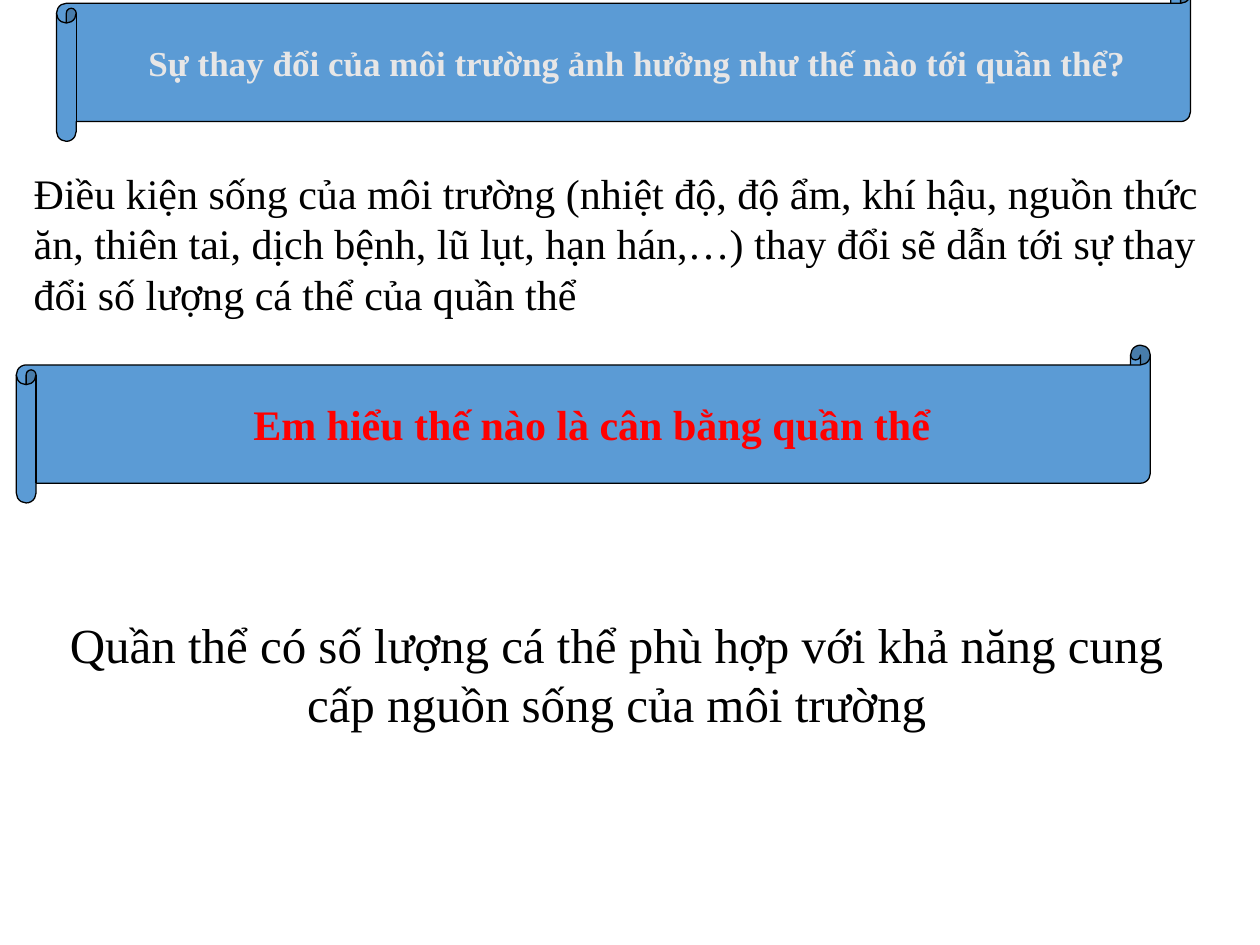
from dataclasses import dataclass

from pptx import Presentation
from pptx.dml.color import RGBColor
from pptx.enum.shapes import MSO_SHAPE as Shape
from pptx.enum.text import MSO_ANCHOR as Anchor, MSO_AUTO_SIZE as AutoSize, PP_ALIGN as Align
from pptx.util import Cm, Pt


@dataclass(frozen=True)
class Theme:
    font: str = "Times New Roman"
    banner: RGBColor = RGBColor(0x5B, 0x9B, 0xD5)
    ink: RGBColor = RGBColor(0, 0, 0)
    pale: RGBColor = RGBColor(0xE7, 0xE6, 0xE6)
    accent: RGBColor = RGBColor(0xFF, 0, 0)
    small: Pt = Pt(20)
    medium: Pt = Pt(24)
    large: Pt = Pt(28)


THEME = Theme()
SCROLL_WIDTH, SCROLL_HEIGHT = Cm(22.86), Cm(3.18)


def write_text(shape, text, *, size, color=THEME.ink, bold=False, align=Align.LEFT):
    paragraph = shape.text_frame.paragraphs[0]
    paragraph.alignment = align
    run = paragraph.add_run()
    run.text = text
    run.font.name = THEME.font
    run.font.size = size
    run.font.bold = bold
    run.font.color.rgb = color


def add_scroll(slide, left, top, text, *, indent, **text_format):
    """Add a question banner; indent moves its centred text to the right."""
    shape = slide.shapes.add_shape(
        Shape.HORIZONTAL_SCROLL, left, top, SCROLL_WIDTH, SCROLL_HEIGHT)
    shape.shadow.inherit = False
    shape.fill.solid()
    shape.fill.fore_color.rgb = THEME.banner
    shape.line.color.rgb = THEME.ink
    shape.line.width = Pt(0.75)
    frame = shape.text_frame
    frame.word_wrap = False
    frame.vertical_anchor = Anchor.MIDDLE
    frame.margin_left = Cm(0.25) + indent
    write_text(shape, text, bold=True, align=Align.CENTER, **text_format)


def add_answer(slide, left, top, width, height, text, **text_format):
    box = slide.shapes.add_textbox(left, top, width, height)
    box.text_frame.word_wrap = True
    box.text_frame.auto_size = AutoSize.SHAPE_TO_FIT_TEXT
    write_text(box, text, **text_format)


def main():
    presentation = Presentation()
    presentation.slide_width, presentation.slide_height = Cm(25.4), Cm(19.05)
    slide = presentation.slides.add_slide(presentation.slide_layouts[6])

    add_scroll(slide, Cm(1.14), Cm(-0.33),
               "Sự thay đổi của môi trường ảnh hưởng như thế nào tới quần thể?",
               indent=Cm(0.35), size=THEME.small, color=THEME.pale)
    add_scroll(slide, Cm(0.33), Cm(6.96),
               "Em hiểu thế nào là cân bằng quần thể",
               indent=Cm(0.14), size=THEME.medium, color=THEME.accent)
    add_answer(slide, Cm(0.43), Cm(3.25), Cm(24.97), Cm(3.33),
               "Điều kiện sống của môi trường (nhiệt độ, độ ẩm, khí hậu, nguồn thức ăn, "
               "thiên tai, dịch bệnh, lũ lụt, hạn hán,…) thay đổi sẽ dẫn tới sự thay đổi "
               "số lượng cá thể của quần thể",
               size=THEME.medium)
    add_answer(slide, Cm(1.14), Cm(12.27), Cm(22.58), Cm(2.64),
               "Quần thể có số lượng cá thể phù hợp với khả năng cung cấp nguồn sống "
               "của môi trường",
               size=THEME.large, align=Align.CENTER)

    presentation.save("out.pptx")


if __name__ == "__main__":
    main()
